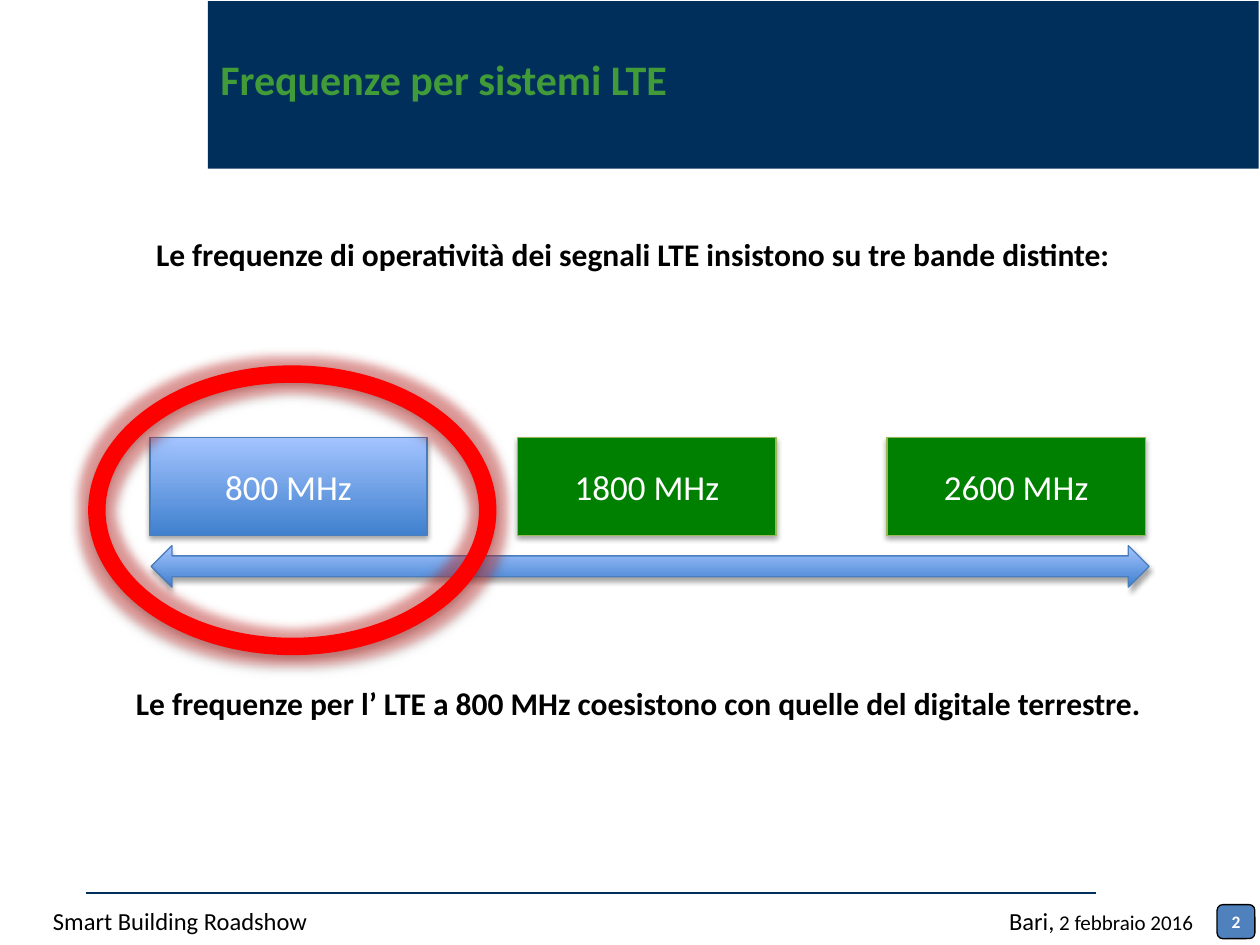
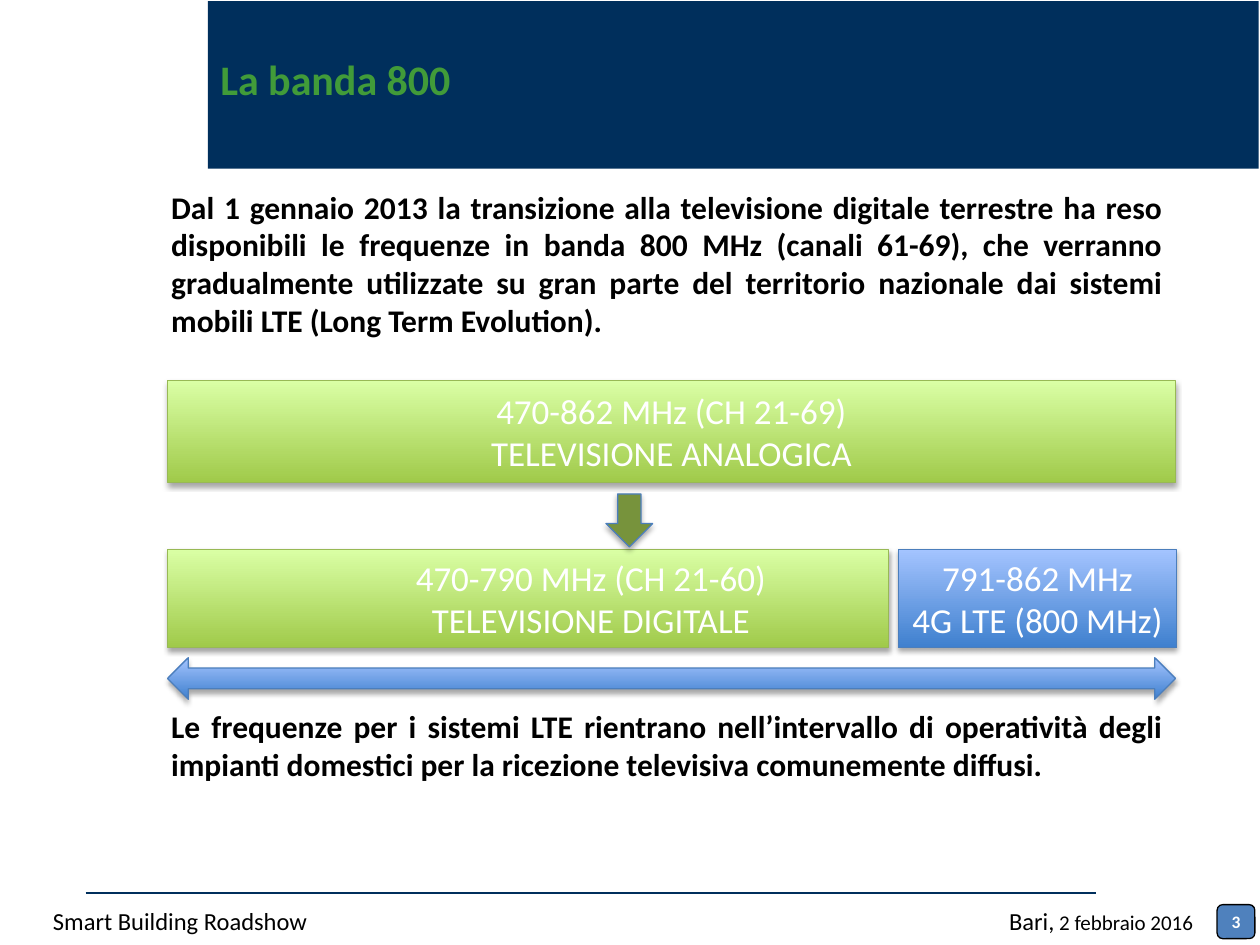
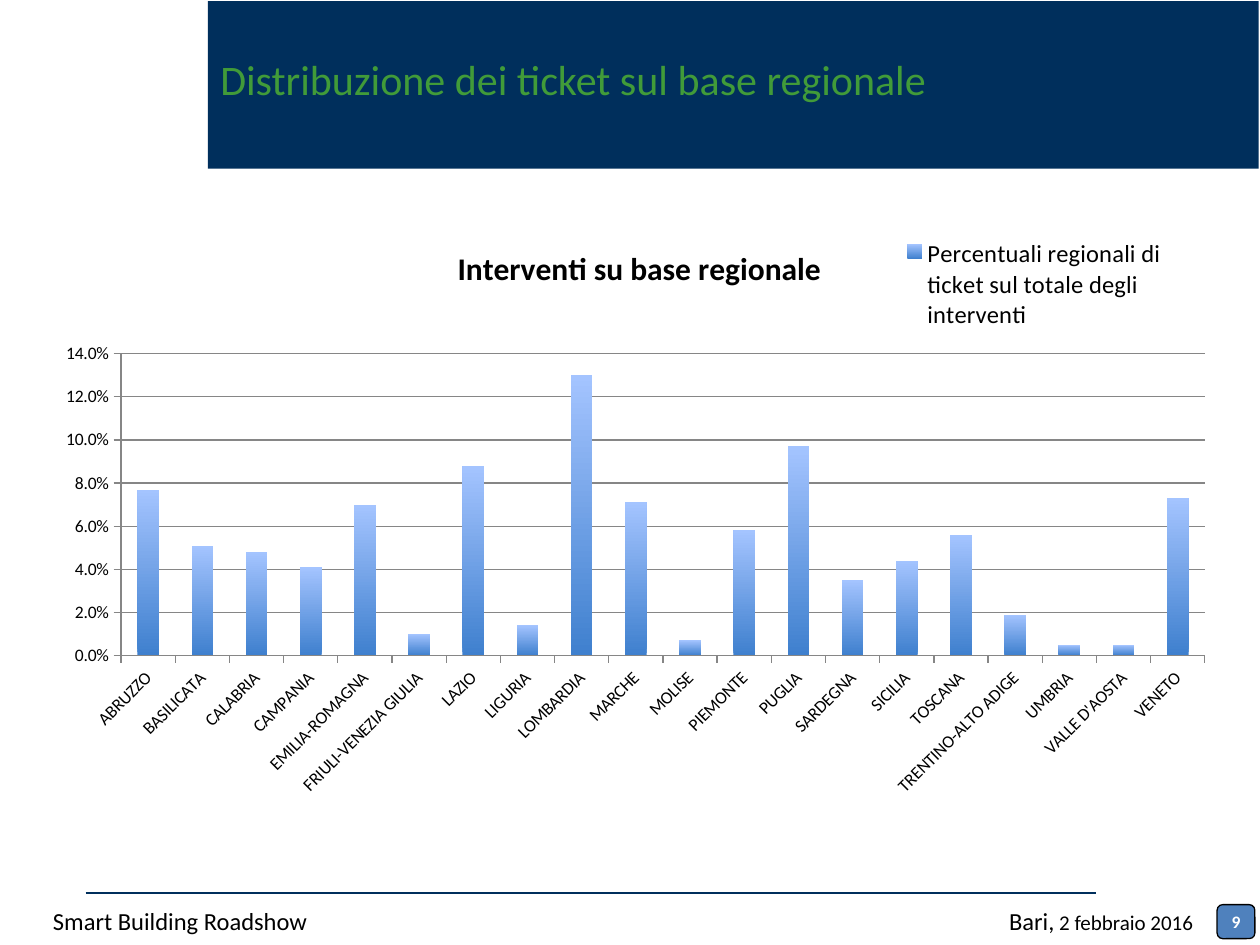
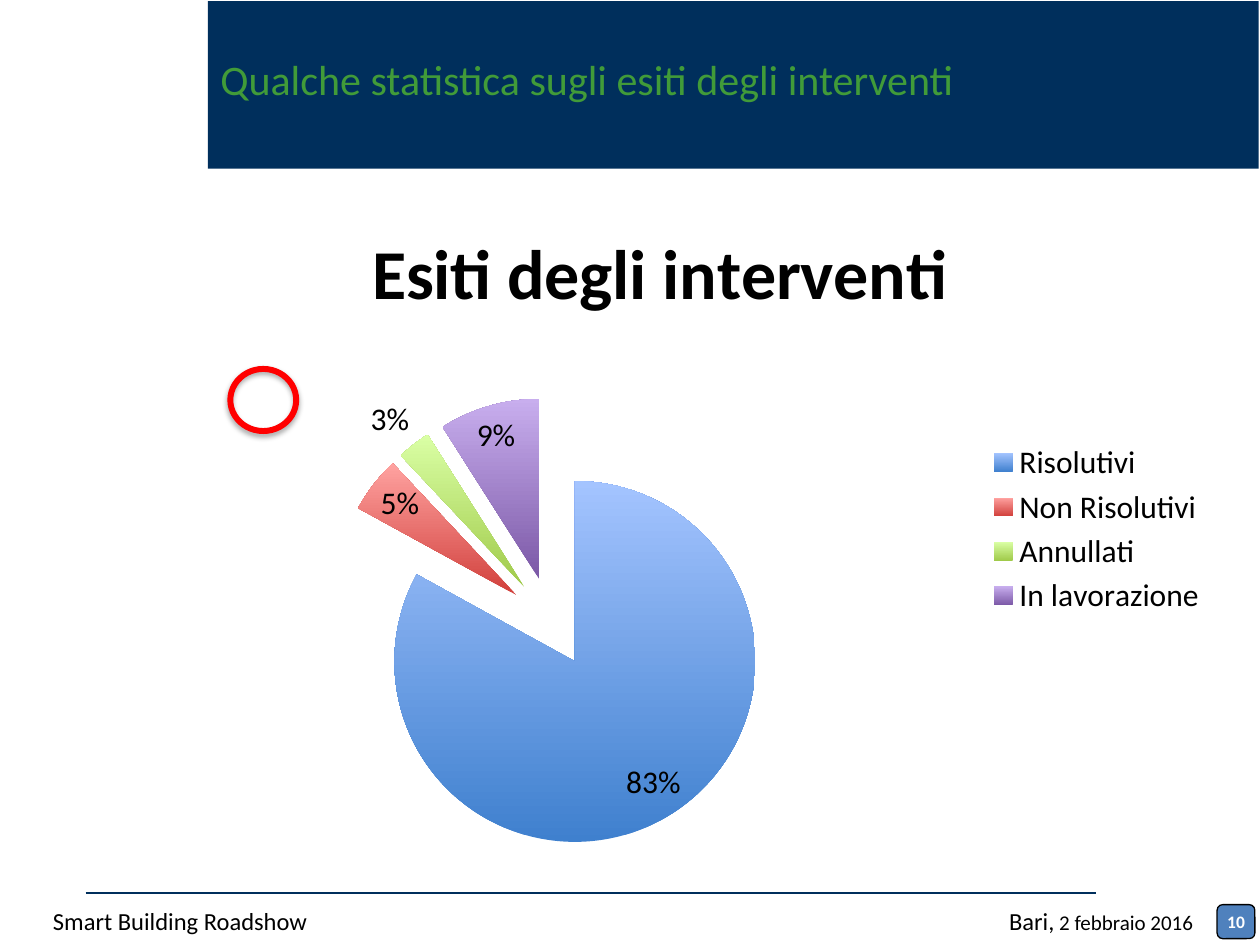
from lxml import etree
from pptx import Presentation
from pptx.chart.data import CategoryChartData
from pptx.dml.color import RGBColor
from pptx.enum import chart as ch, shapes, text
from pptx.oxml import parse_xml
from pptx.oxml.ns import nsdecls, qn
from pptx.util import Inches, Pt

COLORS = {
    "navy": "002F5C", "title": "419B39", "badge": "4F81BD",
    "black": "000000", "white": "FFFFFF", "red": "FF0000",
    "green": "008000", "olive": "77933C", "axis": "868686",
    "blue_line": "4B7EBC", "lime_line": "98B955", "glow": "D62F2B",
}
# Dark bottom, light top
GRADIENTS = {
    "blue": ("3F80CE", "A4C4FF"), "coral": ("D1403C", "FFA2A0"),
    "lime": ("A0CA4A", "DAFFA5"), "violet": ("7B58A6", "C8AEEE"),
}
FONT = "Calibri"
COLS, ROWS = 100, 75
SHAPE, ALIGN = shapes.MSO_SHAPE, text.PP_ALIGN
BOX_Y, BOX_H = 34.7, 7.8    # frequency boxes on the first slide
BAND_X, BAND_W = 13.3, 80   # spectrum bands on the second slide


def rgb(name):
    return RGBColor.from_string(COLORS[name])


class Deck:
    """Shared style and the slide being built; lengths are grid columns and rows."""

    def __init__(self):
        self.prs = Presentation()
        self.prs.slide_width, self.prs.slide_height = Inches(10), Inches(7.5)
        self.s = None

    def at(self, x, y, w, h):
        cw, rh = self.prs.slide_width / COLS, self.prs.slide_height / ROWS
        return [int(v) for v in (x * cw, y * rh, w * cw, h * rh)]

    # Slide frame: band, rule, footer, number, title
    def slide(self, title, number, bold=False):
        self.s = self.prs.slides.add_slide(self.prs.slide_layouts[6])
        self.shape(SHAPE.RECTANGLE, (16.5, 0.1, 83.4, 13.3), "navy", shadow=False)
        self.rule(6.8, 87, 70.9)
        badge = self.shape(SHAPE.ROUNDED_RECTANGLE, (96.6, 71.8, 3, 2.7), "badge",
                           "black", [str(number)], size=10, bold=True, shadow=False)
        badge.text_frame.word_wrap = False
        self.insets(badge.text_frame, 0.04)
        self.footer()
        self.textbox((16.5, 2.5, 83.5, 7.5), title, 24, "title", bold,
                     anchor=text.MSO_ANCHOR.MIDDLE)

    def footer(self):
        tf = self.textbox((4.2, 71.9, 91.2, 2.4), "Smart Building Roadshow\tBari,", 14,
                          anchor=text.MSO_ANCHOR.MIDDLE)
        self.insets(tf, 0)
        p = tf.paragraphs[0]
        self.run(p, " 2 febbraio 2016", 12)
        tabs = etree.SubElement(p._p.get_or_add_pPr(), qn("a:tabLst"))
        etree.SubElement(tabs, qn("a:tab"), pos=str(Inches(9.05)), algn="r")

    # Text
    def run(self, p, words, size, color="black", bold=False):
        r = p.add_run()
        r.text = words
        r.font.name, r.font.size, r.font.bold = FONT, Pt(size), bold
        r.font.color.rgb = rgb(color)

    def insets(self, tf, inch):
        tf.margin_left = tf.margin_right = tf.margin_top = tf.margin_bottom = Inches(inch)

    def textbox(self, box, words, size, color="black", bold=False,
                anchor=text.MSO_ANCHOR.TOP):
        tf = self.s.shapes.add_textbox(*self.at(*box)).text_frame
        tf.word_wrap, tf.vertical_anchor = True, anchor
        self.run(tf.paragraphs[0], words, size, color, bold)
        return tf

    def statement(self, box, words):
        p = self.textbox(box, words, 18, bold=True).paragraphs[0]
        p.alignment = ALIGN.JUSTIFY
        p._p.get_or_add_pPr().set("marL", str(Inches(0.28)))

    # Shapes
    def paint(self, fill, name):
        if name in GRADIENTS:
            fill.gradient()
            fill.gradient_angle = 90
            for stop, value in zip(fill.gradient_stops, GRADIENTS[name]):
                stop.color.rgb = RGBColor.from_string(value)
        else:
            fill.solid()
            fill.fore_color.rgb = rgb(name)

    def effects(self, sp, glow):
        sp.shadow.inherit = False
        effects = sp._element.spPr.find(qn("a:effectLst"))
        if glow:
            effects.append(parse_xml(
                f'<a:glow {nsdecls("a")} rad="{Pt(11)}"><a:srgbClr val="{COLORS["glow"]}">'
                '<a:alpha val="40000"/></a:srgbClr></a:glow>'))
        effects.append(parse_xml(
            f'<a:outerShdw {nsdecls("a")} blurRad="40000" dist="23000" dir="5400000" '
            'rotWithShape="0"><a:srgbClr val="000000"><a:alpha val="35000"/>'
            '</a:srgbClr></a:outerShdw>'))

    def shape(self, kind, box, fill, line=None, lines=(), size=20, bold=False,
              shadow=True, glow=False):
        sp = self.s.shapes.add_shape(kind, *self.at(*box))
        self.paint(sp.fill, fill)
        if line:
            sp.line.color.rgb, sp.line.width = rgb(line), Pt(0.75)
        else:
            sp.line.fill.background()
        if shadow:
            self.effects(sp, glow)
        else:
            sp.shadow.inherit = False
        tf = sp.text_frame
        tf.vertical_anchor = text.MSO_ANCHOR.MIDDLE
        for i, words in enumerate(lines):
            p = tf.add_paragraph() if i else tf.paragraphs[0]
            p.alignment = ALIGN.CENTER
            self.run(p, words, size, "white", bold)
        return sp

    def band(self, box, color, *lines, fill=None):
        return self.shape(SHAPE.RECTANGLE, box, fill or color, f"{color}_line", lines)

    def span(self, x, y, w):
        self.shape(SHAPE.LEFT_RIGHT_ARROW, (x, y, w, 3.3), "blue", "blue_line")

    def ring(self, box, thickness, line=None, glow=False):
        sp = self.shape(SHAPE.DONUT, box, "red", line, glow=glow)
        sp.adjustments[0] = thickness

    def rule(self, x1, x2, y):
        x, top, w, _ = self.at(x1, y, x2 - x1, 0)
        c = self.s.shapes.add_connector(shapes.MSO_CONNECTOR.STRAIGHT, x, top, x + w, top)
        c.line.color.rgb, c.line.width = rgb("navy"), Pt(1)
        etree.SubElement(c._element.spPr, qn("a:effectLst"))

    # Charts
    def chart(self, kind, box, title, title_size, size, name, values):
        data = CategoryChartData()
        data.categories = list(values)
        data.add_series(name, list(values.values()))
        chart = self.s.shapes.add_chart(kind, *self.at(*box), data).chart
        chart.font.name, chart.font.size = FONT, Pt(size)
        chart.font.color.rgb = rgb("black")
        chart.has_title = chart.has_legend = True
        self.run(chart.chart_title.text_frame.paragraphs[0], title, title_size, bold=True)
        chart.legend.position = ch.XL_LEGEND_POSITION.RIGHT
        chart.legend.include_in_layout = False
        return chart

    def layout(self, x, y, w, h, inner=False):
        target = '<c:layoutTarget val="inner"/>' if inner else ""
        return parse_xml(
            f'<c:layout {nsdecls("c")}><c:manualLayout>{target}<c:xMode val="edge"/>'
            f'<c:yMode val="edge"/><c:x val="{x}"/><c:y val="{y}"/><c:w val="{w}"/>'
            f'<c:h val="{h}"/></c:manualLayout></c:layout>')

    def columns(self, box, title, name, values):
        chart = self.chart(ch.XL_CHART_TYPE.COLUMN_CLUSTERED, box, title, 18, 10, name, values)
        plot = chart.plots[0]
        plot.gap_width, plot.vary_by_categories = 150, False
        self.paint(plot.series[0].format.fill, "blue")
        for axis in (chart.category_axis, chart.value_axis):
            axis.major_tick_mark = ch.XL_TICK_MARK.OUTSIDE
            axis.format.line.color.rgb = rgb("axis")
            axis.tick_labels.font.size = Pt(10)
        chart.category_axis._element.txPr.bodyPr.set("rot", "-2700000")
        labels = chart.value_axis.tick_labels
        labels.number_format, labels.number_format_is_linked = "0.0%", False
        chart.value_axis.major_gridlines.format.line.color.rgb = rgb("axis")
        chart.legend.font.size = Pt(14)
        chart.legend._element.find(qn("c:legendPos")).addnext(
            self.layout(0.71, 0.02, 0.25, 0.16))
        area = chart._chartSpace.chart.plotArea
        for empty in area.findall(qn("c:layout")):
            area.remove(empty)
        area.insert(0, self.layout(0.06, 0.21, 0.92, 0.48, inner=True))

    def pie(self, box, title, name, values, fills):
        chart = self.chart(ch.XL_CHART_TYPE.PIE, box, title, 40, 18, name, values)
        plot = chart.plots[0]
        plot.vary_by_categories = True
        series = plot.series[0]
        series._element.find(qn("c:tx")).addnext(
            parse_xml(f'<c:explosion {nsdecls("c")} val="25"/>'))
        for i, fill in enumerate(fills):
            self.paint(series.points[i].format.fill, fill)
        plot.has_data_labels = True
        labels = plot.data_labels
        labels.show_percentage, labels.show_value = True, False
        labels.number_format, labels.number_format_is_linked = "0%", False
        labels.position = ch.XL_LABEL_POSITION.BEST_FIT


def frequencies(d):
    d.slide("Frequenze per sistemi LTE", 2, bold=True)
    d.band((11.9, BOX_Y, 22, BOX_H), "blue", "800 MHz")
    for i, words in enumerate(("1800 MHz", "2600 MHz")):
        d.band((41.1 + 29.3 * i, BOX_Y, 20.5, BOX_H), "lime", words, fill="green")
    d.span(12, 43.3, 79.2)
    d.statement((7, 53.8, 85.1, 4),
                "Le frequenze per l’ LTE a 800 MHz coesistono con quelle del digitale terrestre.")
    d.statement((8.6, 18.2, 83.5, 4),
                "Le frequenze di operatività dei segnali LTE insistono su tre bande distinte:")
    d.ring((7, 29, 32.4, 23), 0.06, glow=True)


def band_800(d):
    d.slide("La banda 800", 3, bold=True)
    d.band((BAND_X, 30.2, BAND_W, 8.1), "lime",
           "470-862 MHz (CH 21-69)", "TELEVISIONE ANALOGICA")
    digital = d.band((BAND_X, 43.6, 57.2, 7.8), "lime",
                     "470-790 MHz (CH 21-60)", "TELEVISIONE DIGITALE")
    digital.text_frame.margin_left = Inches(1.1)
    d.band((71.3, 43.6, 22.1, 7.8), "blue", "791-862 MHz", "4G LTE (800 MHz)")
    d.shape(SHAPE.DOWN_ARROW, (48.1, 39.2, 3.7, 4.2), "olive", "blue_line")
    d.span(BAND_X, 52.2, BAND_W)
    d.statement((9.8, 55.6, 83.5, 7.1),
                "Le frequenze per i sistemi LTE rientrano nell’intervallo di operatività degli "
                "impianti domestici per la ricezione televisiva comunemente diffusi.")
    d.statement((9.8, 14.4, 83.5, 13.1),
                "Dal 1 gennaio 2013 la transizione alla televisione digitale terrestre ha reso "
                "disponibili le frequenze in banda 800 MHz (canali 61-69), che verranno "
                "gradualmente utilizzate su gran parte del territorio nazionale dai sistemi "
                "mobili LTE (Long Term Evolution).")


def regions(d):
    d.slide("Distribuzione dei ticket sul base regionale", 9)
    shares = {
        "ABRUZZO": 0.077, "BASILICATA": 0.051, "CALABRIA": 0.048, "CAMPANIA": 0.041,
        "EMILIA-ROMAGNA": 0.07, "FRIULI-VENEZIA GIULIA": 0.01, "LAZIO": 0.088,
        "LIGURIA": 0.014, "LOMBARDIA": 0.13, "MARCHE": 0.071, "MOLISE": 0.007,
        "PIEMONTE": 0.058, "PUGLIA": 0.097, "SARDEGNA": 0.035, "SICILIA": 0.044,
        "TOSCANA": 0.056, "TRENTINO-ALTO ADIGE": 0.019, "UMBRIA": 0.005,
        "VALLE D'AOSTA": 0.005, "VENETO": 0.073,
    }
    d.columns((4, 17.6, 93.5, 49.9), "Interventi su base regionale",
              "Percentuali regionali di ticket sul totale degli interventi", shares)


def outcomes(d):
    d.slide("Qualche statistica sugli esiti degli interventi", 10)
    d.pie((7.9, 15.3, 88.9, 53.4), "Esiti degli interventi", "Series 1",
          {"Risolutivi": 83, "Non Risolutivi": 5, "Annullati": 3, "In lavorazione": 9},
          ("blue", "coral", "lime", "violet"))
    d.ring((18.1, 29.1, 5.6, 5.3), 0.07, line="red")


def main():
    d = Deck()
    for build in (frequencies, band_800, regions, outcomes):
        build(d)
    d.prs.save("out.pptx")


if __name__ == "__main__":
    main()
